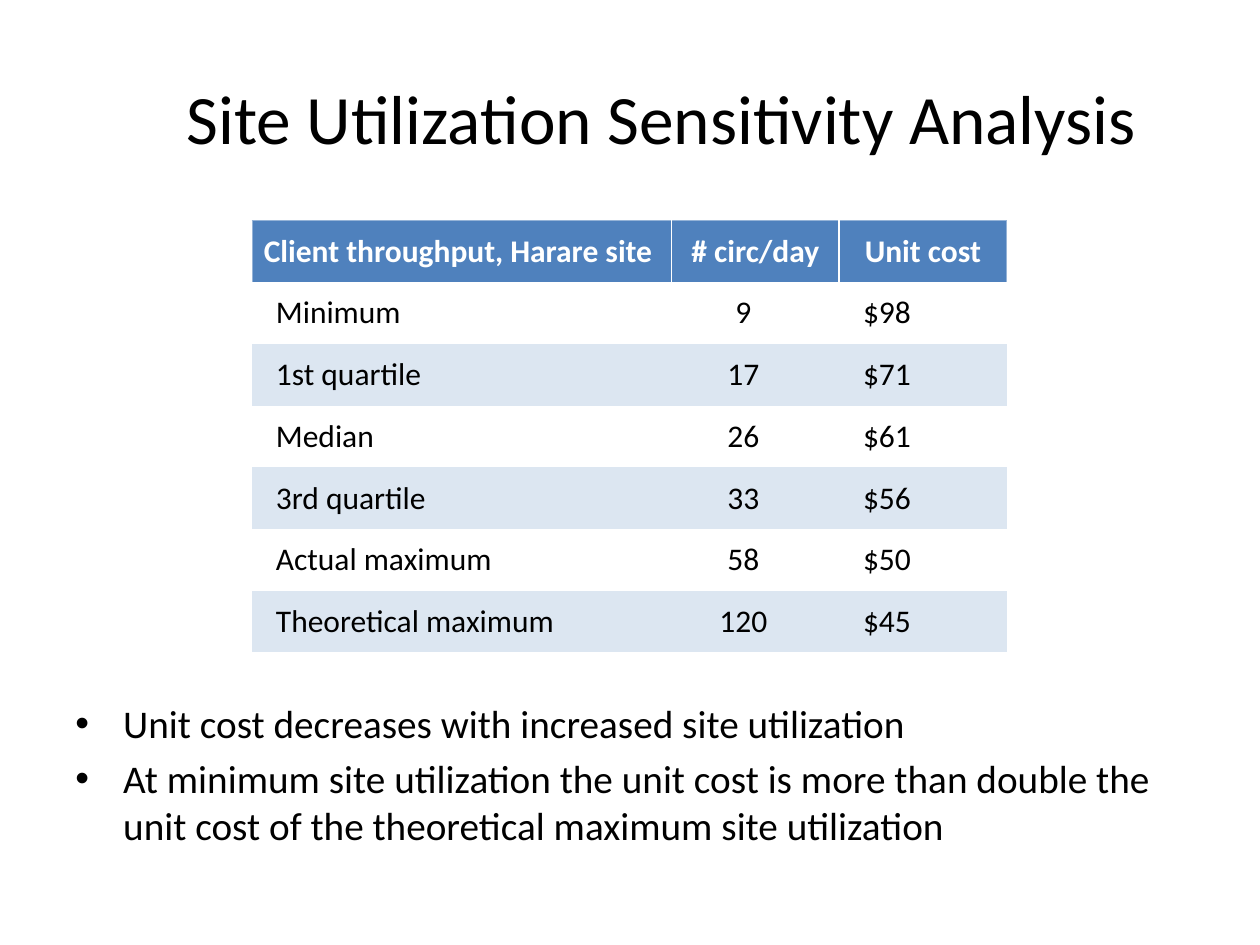
from lxml.etree import SubElement
from pptx import Presentation
from pptx.dml.color import RGBColor
from pptx.enum.text import MSO_ANCHOR as Anchor, PP_ALIGN as Align
from pptx.oxml.ns import qn
from pptx.util import Pt

PX = 9144  # EMU per px, 100 px to the inch
FONT = "Calibri"
COLORS = {
    "text": "000000",
    "header_text": "FFFFFF",
    "header": "4F81BD",
    "band": "DCE6F1",
    "outer_line": "95B3D7",
    "inner_line": "FFFFFF",
}
PLAIN_TABLE_STYLE = "{2D5ABB26-0587-4C30-8999-92F81FD0307C}"

TITLE = "Site Utilization Sensitivity Analysis"
HEADERS = ["Client throughput, Harare site ", "# circ/day", "Unit cost"]
ROWS = [
    ["Minimum", "9", "$98"],
    ["1st quartile", "17", "$71"],
    ["Median", "26", "$61"],
    ["3rd quartile", "33", "$56"],
    ["Actual maximum", "58", "$50"],
    ["Theoretical maximum", "120", "$45"],
]
FINDINGS = [
    "Unit cost decreases with increased site utilization",
    "At minimum site utilization the unit cost is more than double the "
    "unit cost of the theoretical maximum site utilization",
]


def px(*lengths):
    return [length * PX for length in lengths]


def format_runs(paragraph, size, color="text", bold=False):
    for run in paragraph.runs:
        run.font.name = FONT
        run.font.size = Pt(size)
        run.font.bold = bold
        run.font.color.rgb = RGBColor.from_string(COLORS[color])


def add_text_frame(slide, box):
    text_frame = slide.shapes.add_textbox(*px(*box)).text_frame
    text_frame.word_wrap = True
    return text_frame


def add_title(slide, box):
    text_frame = add_text_frame(slide, box)
    text_frame.vertical_anchor = Anchor.MIDDLE
    text_frame.text = TITLE
    paragraph = text_frame.paragraphs[0]
    paragraph.alignment = Align.CENTER
    format_runs(paragraph, 39.6)


def add_border(cell, side, color, width):
    properties = cell._tc.get_or_add_tcPr()
    line = SubElement(properties, qn(f"a:ln{side}"), w=str(Pt(width)))
    fill = SubElement(line, qn("a:solidFill"))
    SubElement(fill, qn("a:srgbClr"), val=COLORS[color])


def fill_cell(cell, text, alignment, left=0, right=0, fill=None, **text_format):
    cell.vertical_anchor = Anchor.MIDDLE
    cell.margin_left, cell.margin_right = px(left, right)
    cell.margin_top = cell.margin_bottom = 0
    cell.text = text
    paragraph = cell.text_frame.paragraphs[0]
    paragraph.alignment = alignment
    format_runs(paragraph, 18, **text_format)
    if fill:
        cell.fill.solid()
        cell.fill.fore_color.rgb = RGBColor.from_string(COLORS[fill])
    else:
        cell.fill.background()


def add_cost_table(slide, box):
    row_count, column_count = len(ROWS) + 1, len(HEADERS)
    table = slide.shapes.add_table(row_count, column_count, *px(*box)).table
    table.first_row = table.horz_banding = False
    table._tbl.tblPr.find(qn("a:tableStyleId")).text = PLAIN_TABLE_STYLE

    # The two number columns share one width
    number_width = 133
    widths = [box[2] - 2 * number_width, number_width, number_width]
    for column, width in zip(table.columns, px(*widths)):
        column.width = width
    for row in table.rows:
        row.height = box[3] // row_count * PX

    # Header row
    outer, inner = ("outer_line", 0.5), ("inner_line", 1)
    for index, text in enumerate(HEADERS):
        cell = table.cell(0, index)
        add_border(cell, "L", *(outer if index == 0 else inner))
        add_border(cell, "R", *(outer if index == column_count - 1 else inner))
        add_border(cell, "T", *outer)
        fill_cell(cell, text, Align.CENTER, fill="header",
                  color="header_text", bold=True)

    # Body rows, every second one banded
    for row_index, values in enumerate(ROWS, start=1):
        band = "band" if row_index % 2 == 0 else None
        for index, text in enumerate(values):
            cell = table.cell(row_index, index)
            if index == 1:
                fill_cell(cell, text, Align.CENTER, right=19, fill=band)
            else:
                fill_cell(cell, text, Align.LEFT, left=19, fill=band)


def add_findings(slide, box):
    text_frame = add_text_frame(slide, box)
    for index, text in enumerate(FINDINGS):
        paragraph = text_frame.paragraphs[0] if index == 0 else text_frame.add_paragraph()
        paragraph.text = text
        properties = paragraph._p.get_or_add_pPr()
        properties.set("marL", str(38 * PX))
        properties.set("indent", str(-38 * PX))
        SubElement(properties, qn("a:buFont"), typeface="Arial")
        SubElement(properties, qn("a:buChar"), char="•")
        paragraph.space_before = Pt(4.5 if index else 0)
        format_runs(paragraph, 22.4)


def main():
    presentation = Presentation()
    presentation.slide_width, presentation.slide_height = px(1000, 750)
    slide = presentation.slides.add_slide(presentation.slide_layouts[6])
    add_title(slide, (100, 30, 850, 125))
    add_cost_table(slide, (200, 175, 599, 343))
    add_findings(slide, (50, 550, 900, 108))
    presentation.save("out.pptx")


if __name__ == "__main__":
    main()
